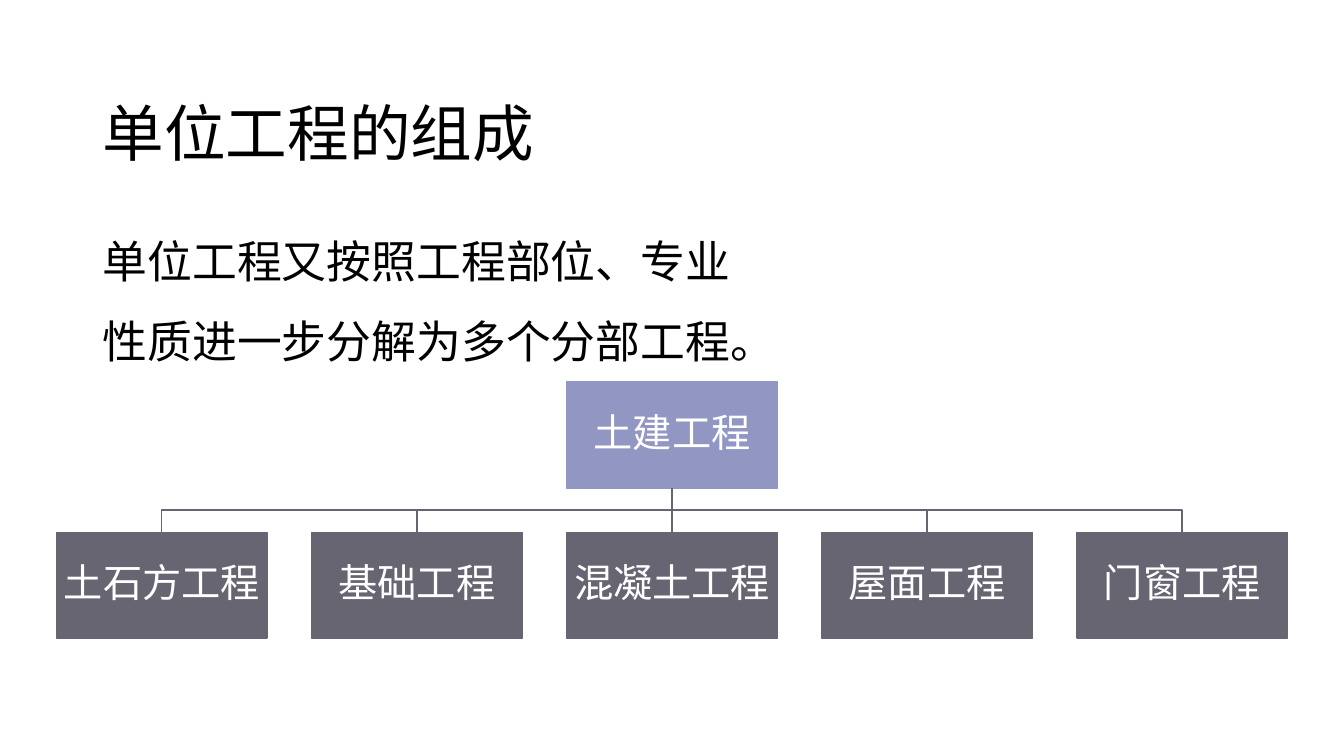
from lxml.etree import SubElement
from pptx import Presentation
from pptx.dml.color import RGBColor
from pptx.enum.shapes import MSO_CONNECTOR as CONNECTOR, MSO_SHAPE as SHAPE
from pptx.enum.text import MSO_ANCHOR as ANCHOR, PP_ALIGN as ALIGN
from pptx.oxml.ns import qn
from pptx.util import Inches, Pt

COLORS = {"text": "000000", "label": "FFFFFF", "root": "9196C3", "branch": "686573"}
LATIN_FONT = "Times New Roman"
CJK_FONT = "Noto Sans CJK SC"
BRANCHES = ["土石方工程", "基础工程", "混凝土工程", "屋面工程", "门窗工程"]

BOX_W, BOX_H = 2.09, 1.05
BRANCH_LEFT, BRANCH_STEP = 0.56, 2.53
ROOT_TOP, BRANCH_TOP = 3.79, 5.28


def rgb(name):
    return RGBColor.from_string(COLORS[name])


def format_run(r, size, color, font):
    r.font.size = Pt(size)
    r.font.name = font
    r.font.color.rgb = rgb(color)
    SubElement(r._r.get_or_add_rPr(), qn("a:ea"), typeface=CJK_FONT)


def add_text(slide, text, left, top, width, height, size, anchor, space_before=0):
    tf = slide.shapes.add_textbox(
        Inches(left), Inches(top), Inches(width), Inches(height)).text_frame
    tf.word_wrap = True
    tf.vertical_anchor = anchor
    tf.text = text
    p = tf.paragraphs[0]
    p.line_spacing = 1.5
    p.space_before = Pt(space_before)
    format_run(p.runs[0], size, "text", LATIN_FONT)


def add_box(slide, text, left, top, color):
    sp = slide.shapes.add_shape(
        SHAPE.RECTANGLE, Inches(left), Inches(top), Inches(BOX_W), Inches(BOX_H))
    sp.shadow.inherit = False
    sp.fill.solid()
    sp.fill.fore_color.rgb = rgb(color)
    sp.line.color.rgb = rgb(color)
    sp.line.width = Pt(1)
    tf = sp.text_frame
    tf.word_wrap = True
    tf.vertical_anchor = ANCHOR.MIDDLE
    tf.margin_left = tf.margin_right = tf.margin_top = tf.margin_bottom = Inches(0.02)
    tf.text = text
    p = tf.paragraphs[0]
    p.alignment = ALIGN.CENTER
    p.line_spacing = 0.9
    format_run(p.runs[0], 28, "label", CJK_FONT)
    return sp


def style_line(line):
    line.color.rgb = rgb("branch")
    line.width = Pt(1)


def add_straight_link(slide, root, branch):
    link = slide.shapes.add_connector(CONNECTOR.STRAIGHT, 0, 0, 0, 0)
    link.begin_connect(root, 2)
    link.end_connect(branch, 0)
    style_line(link.line)
    SubElement(link._element.spPr, qn("a:effectLst"))


def add_elbow_link(slide, root, branch):
    """Draw a line down from root, across halfway, and down to branch."""
    start_x, start_y = root.left + root.width // 2, root.top + root.height
    end_x, end_y = branch.left + branch.width // 2, branch.top
    mid_y = (start_y + end_y) // 2
    builder = slide.shapes.build_freeform(start_x, start_y)
    builder.add_line_segments(
        [(start_x, mid_y), (end_x, mid_y), (end_x, end_y)], close=False)
    sp = builder.convert_to_shape()
    sp.shadow.inherit = False
    sp.fill.background()
    style_line(sp.line)


def add_tree(slide):
    middle = len(BRANCHES) // 2
    root = add_box(slide, "土建工程", BRANCH_LEFT + middle * BRANCH_STEP, ROOT_TOP, "root")
    for i, name in enumerate(BRANCHES):
        branch = add_box(slide, name, BRANCH_LEFT + i * BRANCH_STEP, BRANCH_TOP, "branch")
        add_link = add_straight_link if i == middle else add_elbow_link
        add_link(slide, root, branch)


def main():
    prs = Presentation()
    prs.slide_width, prs.slide_height = Inches(13.33), Inches(7.5)
    slide = prs.slides.add_slide(prs.slide_layouts[6])
    add_text(slide, "单位工程的组成", 0.92, 0.4, 11.5, 1.45, 44, ANCHOR.MIDDLE)
    add_text(slide, "单位工程又按照工程部位、专业性质进一步分解为多个分部工程。",
             0.92, 2, 6.69, 4.76, 32, ANCHOR.TOP, space_before=10)
    add_tree(slide)
    prs.save("out.pptx")


if __name__ == "__main__":
    main()
